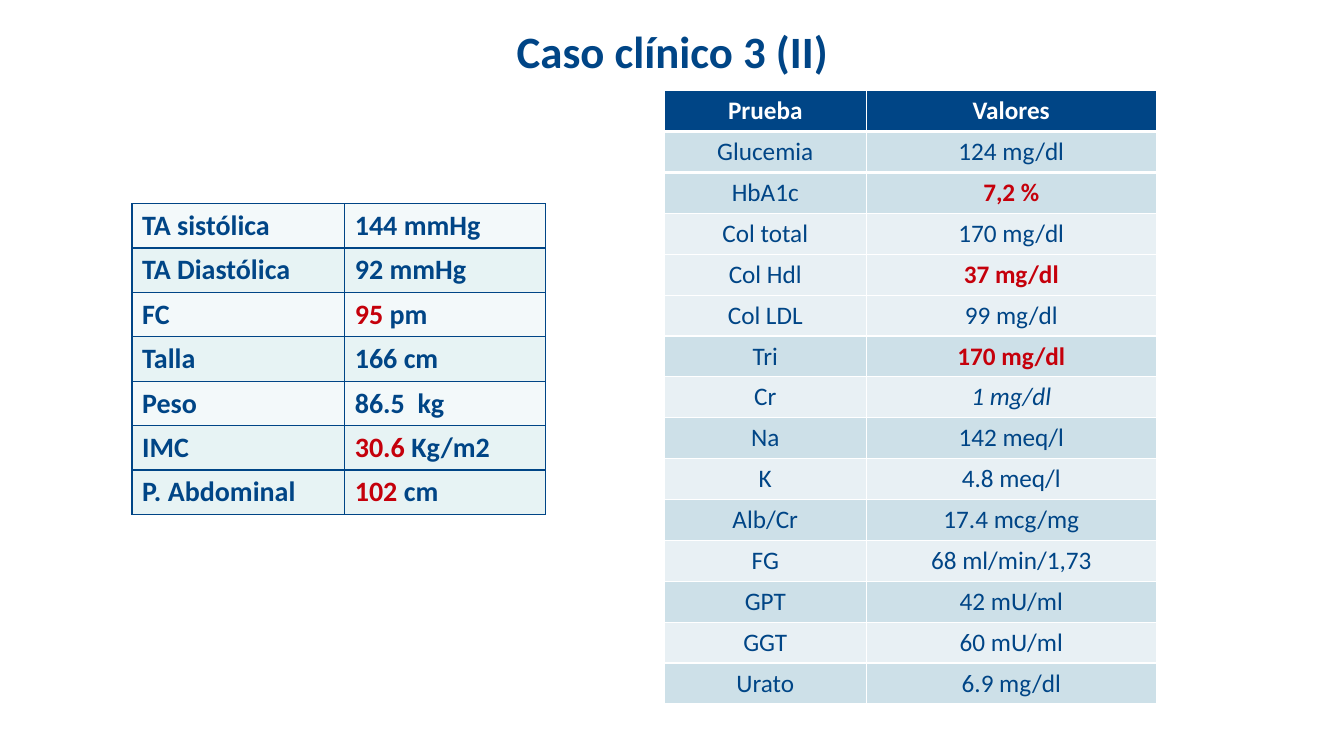
from dataclasses import dataclass

from lxml.etree import SubElement
from pptx import Presentation
from pptx.dml.color import RGBColor
from pptx.enum.text import MSO_ANCHOR, PP_ALIGN
from pptx.oxml.ns import qn
from pptx.util import Inches, Pt


@dataclass(frozen=True)
class Theme:
    font: str = "Calibri"
    title_size: int = 32
    vitals_size: int = 20
    lab_size: int = 18
    navy: str = "004586"
    red: str = "C5000B"
    white: str = "FFFFFF"
    lab_dark: str = "CDE0E8"
    lab_light: str = "E8F0F4"
    vitals_light: str = "F3F9FA"
    vitals_dark: str = "E7F3F4"


THEME = Theme()
ALERT = {"color": THEME.red, "bold": True}
ITALIC = {"italic": True}

VITALS = [
    ("TA sistólica", "144 mmHg", THEME.vitals_light),
    ("TA Diastólica", "92 mmHg", THEME.vitals_dark),
    ("FC", [("95", ALERT), (" pm", {})], THEME.vitals_light),
    ("Talla", "166 cm", THEME.vitals_dark),
    ("Peso", "86.5  kg", THEME.vitals_light),
    ("IMC", [("30.6 ", ALERT), ("Kg/m2", {})], THEME.vitals_dark),
    ("P. Abdominal", [("102 ", ALERT), ("cm", {})], THEME.vitals_dark),
]

LAB_TESTS = [
    ("Glucemia", "124 mg/dl", THEME.lab_dark),
    ("HbA1c", [("7,2 %", ALERT)], THEME.lab_dark),
    ("Col total", "170 mg/dl", THEME.lab_light),
    ("Col Hdl", [("37 mg/dl", ALERT)], THEME.lab_light),
    ("Col LDL", "99 mg/dl", THEME.lab_light),
    ("Tri", [("170 mg/dl", ALERT)], THEME.lab_dark),
    ("Cr", [("1 mg/dl", ITALIC)], THEME.lab_light),
    ("Na", "142 meq/l", THEME.lab_dark),
    ("K", "4.8 meq/l", THEME.lab_light),
    ("Alb/Cr", "17.4 mcg/mg", THEME.lab_dark),
    ("FG", "68 ml/min/1,73", THEME.lab_light),
    ("GPT", "42 mU/ml", THEME.lab_dark),
    ("GGT", "60 mU/ml", THEME.lab_light),
    ("Urato", "6.9 mg/dl", THEME.lab_dark),
]


def write_text(frame, text, size, color=THEME.navy, bold=False, italic=False,
               align=PP_ALIGN.LEFT):
    para = frame.paragraphs[0]
    para.alignment = align
    base = {"color": color, "bold": bold, "italic": italic}
    spans = [(text, {})] if isinstance(text, str) else text
    for words, changes in spans:
        look = {**base, **changes}
        span = para.add_run()
        span.text = words
        span.font.name = THEME.font
        span.font.size = Pt(size)
        span.font.bold = look["bold"]
        span.font.italic = look["italic"]
        span.font.color.rgb = RGBColor.from_string(look["color"])


def draw_borders(cell, color, top=1, bottom=1):
    properties = cell._tc.get_or_add_tcPr()
    widths = {"a:lnL": 1, "a:lnR": 1, "a:lnT": top, "a:lnB": bottom}
    for tag, width in widths.items():
        line = SubElement(properties, qn(tag), w=str(Pt(width)))
        fill = SubElement(line, qn("a:solidFill"))
        SubElement(fill, qn("a:srgbClr"), val=color)


def fill_cell(cell, text, fill, border, top=1, bottom=1, **text_format):
    draw_borders(cell, border, top, bottom)
    cell.fill.solid()
    cell.fill.fore_color.rgb = RGBColor.from_string(fill)
    write_text(cell.text_frame, text, **text_format)


def add_grid(page, box, row_count, column_widths):
    left, top, width, height = map(Inches, box)
    grid = page.shapes.add_table(row_count, len(column_widths), left, top, width, height).table
    grid.first_row = False
    grid.horz_banding = False
    for column, column_width in zip(grid.columns, column_widths):
        column.width = Inches(column_width)
    for row in grid.rows:
        row.height = int(height / row_count)
    return grid


def add_title(page, box, text):
    title = page.shapes.title
    title.left, title.top, title.width, title.height = map(Inches, box)
    title.text_frame.vertical_anchor = MSO_ANCHOR.MIDDLE
    write_text(title.text_frame, text, THEME.title_size, bold=True, align=PP_ALIGN.CENTER)


def add_vitals(page, box):
    label_width = 2.11
    grid = add_grid(page, box, len(VITALS), [label_width, box[2] - label_width])
    for row, (*texts, fill) in enumerate(VITALS):
        for column, text in enumerate(texts):
            fill_cell(grid.cell(row, column), text, fill, THEME.navy,
                      size=THEME.vitals_size, bold=True)


def add_lab_results(page, box):
    test_width = 2
    rows = [("Prueba", "Valores", THEME.navy), *LAB_TESTS]
    grid = add_grid(page, box, len(rows), [test_width, box[2] - test_width])
    for row, (*texts, fill) in enumerate(rows):
        header = row == 0
        for column, text in enumerate(texts):
            fill_cell(grid.cell(row, column), text, fill, THEME.white,
                      top=3 if row in (1, 2) else 1,
                      bottom=3 if row in (0, 1) else 1,
                      size=THEME.lab_size, bold=header,
                      color=THEME.white if header else THEME.navy,
                      align=PP_ALIGN.CENTER)


def main():
    deck = Presentation()
    deck.slide_width = Inches(13.33)
    deck.slide_height = Inches(7.5)
    page = deck.slides.add_slide(deck.slide_layouts[5])
    add_title(page, (0.67, 0.17, 12, 0.66), "Caso clínico 3 (II)")
    add_lab_results(page, (6.59, 0.9, 4.88, 6))
    add_vitals(page, (1.31, 2.02, 4.1, 3.04))
    deck.save("out.pptx")


if __name__ == "__main__":
    main()
